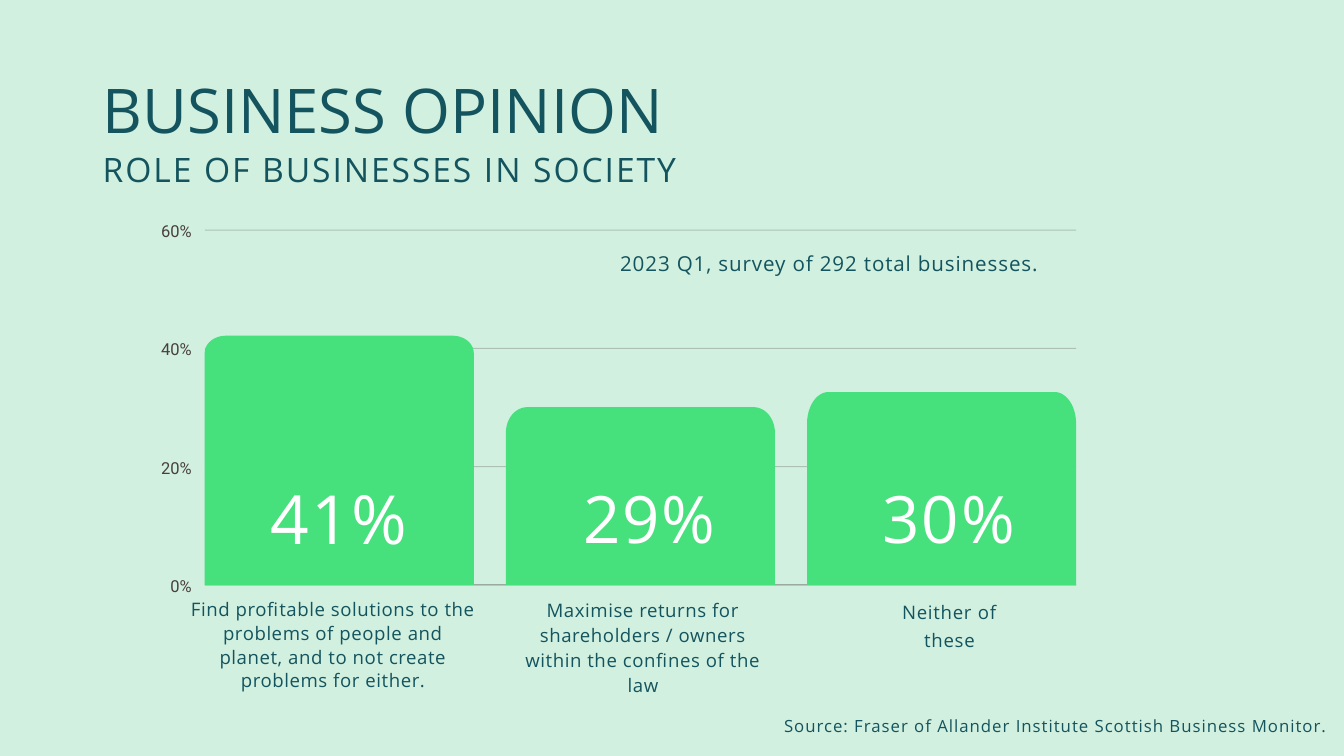
import math
from lxml import etree
from pptx import Presentation
from pptx.dml.color import RGBColor
from pptx.enum import shapes, text
from pptx.oxml.ns import qn
from pptx.util import Cm, Pt

COLOURS = {"page": "D1F0E0", "ink": "14545E", "axis": "49403C", "bar": "46E17D", "white": "FFFFFF"}
LEFT, CENTRE, RIGHT = text.PP_ALIGN.LEFT, text.PP_ALIGN.CENTER, text.PP_ALIGN.RIGHT

TITLE = "BUSINESS OPINION"
SUBTITLE = "ROLE OF BUSINESSES IN SOCIETY"
NOTE = "2023 Q1, survey of 292 total businesses."
SOURCE = "Source: Fraser of Allander Institute Scottish Business Monitor."
AXIS_LABELS = ["60%", "40%", "20%", "0%"]
BARS = [
    {"height": 6.28, "corner": 0.43,
     "value": {"words": "41%", "centre": 8.55, "top": 12.01, "size": 48.4, "line": 58.1},
     "caption": {"words": "Find profitable solutions to the problems of people and planet, "
                          "and to not create problems for either.",
                 "place": (4.8, 15.04, 7.19, 2.41), "line": 16.9, "spacing": 0.4}},
    {"height": 4.48, "corner": 0.64,
     "value": {"words": "29%", "centre": 16.37, "top": 12.04, "size": 46.7, "line": 56},
     "caption": {"words": "Maximise returns for shareholders / owners within the confines of the law",
                 "place": (12.98, 15.04, 6.45, 2.54), "line": 17.7, "spacing": 0.4}},
    {"height": 4.86, "corner": 0.79,
     "value": {"words": "30%", "centre": 23.91, "top": 12.04, "size": 46.7, "line": 56},
     "caption": {"words": "Neither of these",
                 "place": (22.15, 15.01, 3.56, 1.37), "line": 19.7, "spacing": 0.5}},
]

PLOT_LEFT, PLOT_TOP, PLOT_WIDTH = 5.16, 5.8, 21.96
GRID_STEP = 2.98
BASELINE = PLOT_TOP + 3 * GRID_STEP
BAR_WIDTH, BAR_PITCH, CORNER_WIDTH = 6.78, 7.59, 0.54
VALUE_WIDTH, VALUE_HEIGHT = 6, 2
LABEL_WIDTH, LABEL_HEIGHT, LABEL_RIGHT = 1.2, 0.56, 4.83
CORNER_STEPS = 12


def colour(name):
    """Return the named colour."""
    return RGBColor.from_string(COLOURS[name])


def add_text(page, words, place, size, line, ink="ink", align=LEFT, spacing=0,
             font="Open Sans", inset=(0, 0), anchor=text.MSO_ANCHOR.TOP):
    """Add a one-paragraph text box; a line below 2 is a multiple, otherwise points."""
    box = page.shapes.add_textbox(*map(Cm, place))
    frame = box.text_frame
    frame.word_wrap = True
    frame.vertical_anchor = anchor
    frame.margin_left = frame.margin_right = Cm(inset[0])
    frame.margin_top = frame.margin_bottom = Cm(inset[1])
    frame.text = words
    para = frame.paragraphs[0]
    para.alignment = align
    para.line_spacing = line if line < 2 else Pt(line)
    span = para.runs[0]
    span.font.name = font
    span.font.size = Pt(size)
    span.font.color.rgb = colour(ink)
    if spacing:
        span._r.get_or_add_rPr().set("spc", str(round(spacing * 100)))


def add_gridline(page, y, opacity):
    """Draw a translucent line across the plot."""
    line = page.shapes.add_connector(shapes.MSO_CONNECTOR.STRAIGHT, Cm(PLOT_LEFT), Cm(y),
                                     Cm(PLOT_LEFT + PLOT_WIDTH), Cm(y))
    line.line.width = Pt(0.75)
    line.line.color.rgb = colour("axis")
    properties = line._element.spPr
    tint = properties.find(".//" + qn("a:srgbClr"))
    etree.SubElement(tint, qn("a:alpha")).set("val", str(opacity * 1000))
    etree.SubElement(properties, qn("a:effectLst"))


def add_bar(page, left, height, corner):
    """Draw a bar standing on the baseline with elliptical top corners."""
    right, top = left + BAR_WIDTH, BASELINE - height
    angles = [math.pi / 2 * step / CORNER_STEPS for step in range(CORNER_STEPS + 1)]
    rise = [(CORNER_WIDTH * (1 - math.cos(a)), corner * (1 - math.sin(a))) for a in angles]
    points = [(left + dx, top + dy) for dx, dy in rise]
    points += [(right - dx, top + dy) for dx, dy in reversed(rise)]
    points.append((right, BASELINE))
    builder = page.shapes.build_freeform(Cm(left), Cm(BASELINE))
    builder.add_line_segments([(Cm(x), Cm(y)) for x, y in points], close=True)
    bar = builder.convert_to_shape()
    bar.shadow.inherit = False
    bar.fill.solid()
    bar.fill.fore_color.rgb = colour("bar")
    bar.line.fill.background()


def main():
    """Build the survey slide."""
    deck = Presentation()
    deck.slide_width, deck.slide_height = Cm(33.87), Cm(19.05)
    page = deck.slides.add_slide(deck.slide_layouts[6])
    page.background.fill.solid()
    page.background.fill.fore_color.rgb = colour("page")

    add_text(page, TITLE, (2.34, 1.02, 29.21, 3.68), 44, 0.9,
             inset=(0.25, 0.13), anchor=text.MSO_ANCHOR.MIDDLE)
    add_text(page, SUBTITLE, (2.34, 3.73, 29.21, 1.4), 24, 0.9, spacing=1.4, inset=(0.25, 0.13))
    add_text(page, SOURCE, (19.76, 17.55, 13.82, 0.86), 12, 28.3, spacing=0.7)

    for row, label in enumerate(AXIS_LABELS):
        y = PLOT_TOP + row * GRID_STEP
        add_gridline(page, y, 60 if label == "0%" else 25)
        add_text(page, label, (LABEL_RIGHT - LABEL_WIDTH, y - 0.31, LABEL_WIDTH, LABEL_HEIGHT),
                 11.8, 16.5, "axis", RIGHT, font="Roboto")

    for column, bar in enumerate(BARS):
        value, caption = bar["value"], bar["caption"]
        add_bar(page, PLOT_LEFT + column * BAR_PITCH, bar["height"], bar["corner"])
        add_text(page, caption["words"], caption["place"], 13.3, caption["line"],
                 align=CENTRE, spacing=caption["spacing"])
        add_text(page, value["words"],
                 (value["centre"] - VALUE_WIDTH / 2, value["top"], VALUE_WIDTH, VALUE_HEIGHT),
                 value["size"], value["line"], "white", CENTRE, spacing=1.4)

    add_text(page, NOTE, (13.39, 6.15, 15.01, 0.74), 14.7, 22.3, align=CENTRE, spacing=0.6)
    deck.save("out.pptx")


if __name__ == "__main__":
    main()
